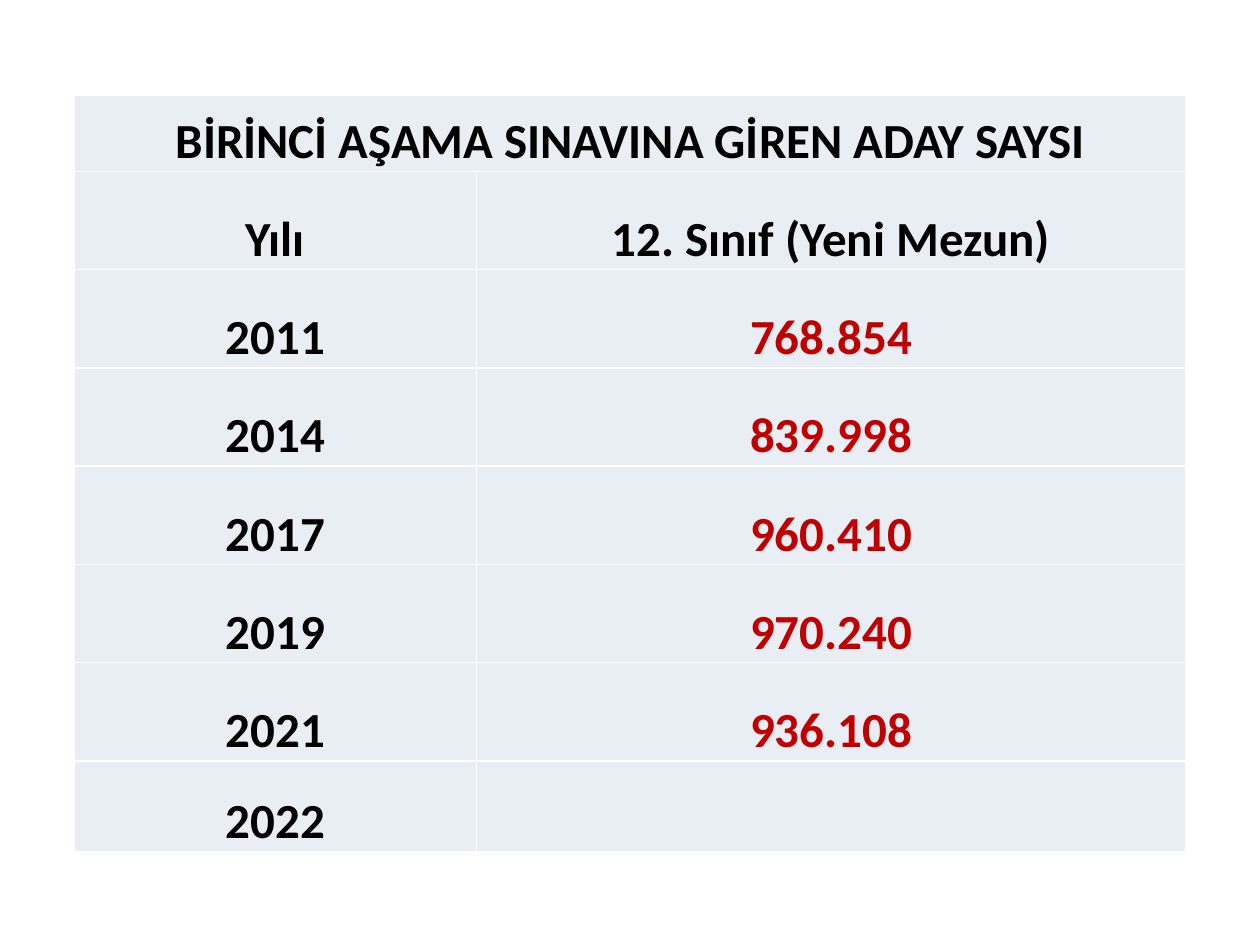
from typing import Any, NamedTuple

from lxml import etree
from pptx import Presentation
from pptx.dml.color import RGBColor
from pptx.enum.text import MSO_ANCHOR, PP_ALIGN
from pptx.oxml.ns import qn
from pptx.util import Inches, Pt

BOTTOM = MSO_ANCHOR.BOTTOM
CENTER = PP_ALIGN.CENTER
BLACK = RGBColor(0x00, 0x00, 0x00)
RED = RGBColor(0xC0, 0x00, 0x00)
PALE = RGBColor(0xE9, 0xED, 0xF4)
WHITE = RGBColor(0xFF, 0xFF, 0xFF)

PAD = Inches(0.01)
CELL = {
    "margin_left": PAD,
    "margin_right": PAD,
    "margin_top": PAD,
    "margin_bottom": Inches(0),
    "vertical_anchor": BOTTOM,
}
FONT = {"name": "Calibri", "size": Pt(28), "bold": True}
PLAIN = {"first_row": False, "horz_banding": False}


class Row(NamedTuple):
    year: str
    count: str
    color: RGBColor = RED
    height: float = 0.78


TITLE = "BİRİNCİ AŞAMA SINAVINA GİREN ADAY SAYSI"
ROWS = [
    Row(TITLE, "", height=0.6),
    Row("Yılı", "12. Sınıf (Yeni Mezun)", BLACK),
    Row("2011", "768.854"),
    Row("2014", "839.998"),
    Row("2017", "960.410"),
    Row("2019", "970.240"),
    Row("2021", "936.108"),
    Row("2022", "", height=0.72),
]
WIDTHS = [3.19, 5.63]


def apply(item: Any, values: dict[str, Any]) -> None:
    for name, value in values.items():
        setattr(item, name, value)


def add_lines(cell: Any) -> None:
    props = cell._tc.get_or_add_tcPr()
    for side in ("L", "R", "T", "B"):
        line = etree.SubElement(props, qn(f"a:ln{side}"), w=str(Pt(1)))
        fill = etree.SubElement(line, qn("a:solidFill"))
        etree.SubElement(fill, qn("a:srgbClr"), val=str(WHITE))


def draw_cell(cell: Any, text: str, color: RGBColor) -> None:
    add_lines(cell)
    cell.fill.solid()
    cell.fill.fore_color.rgb = PALE
    apply(cell, CELL)
    if text:
        para = cell.text_frame.paragraphs[0]
        para.alignment = CENTER
        run = para.add_run()
        run.text = text
        apply(run.font, FONT)
        run.font.color.rgb = color


def draw_table(slide: Any, rows: list[Row]) -> None:
    high = sum(row.height for row in rows)
    frame = slide.shapes.add_table(
        len(rows), len(WIDTHS), Inches(0.59), Inches(0.76),
        Inches(sum(WIDTHS)), Inches(high),
    )
    table = frame.table
    apply(table, PLAIN)
    for column, width in zip(table.columns, WIDTHS):
        column.width = Inches(width)
    for index, row in enumerate(rows):
        table.rows[index].height = Inches(row.height)
        draw_cell(table.cell(index, 0), row.year, BLACK)
        draw_cell(table.cell(index, 1), row.count, row.color)
    table.cell(0, 0).merge(table.cell(0, 1))


def main() -> None:
    deck = Presentation()
    apply(deck, {"slide_width": Inches(10), "slide_height": Inches(7.5)})
    slide = deck.slides.add_slide(deck.slide_layouts[6])
    draw_table(slide, ROWS)
    deck.save("out.pptx")


if __name__ == "__main__":
    main()
